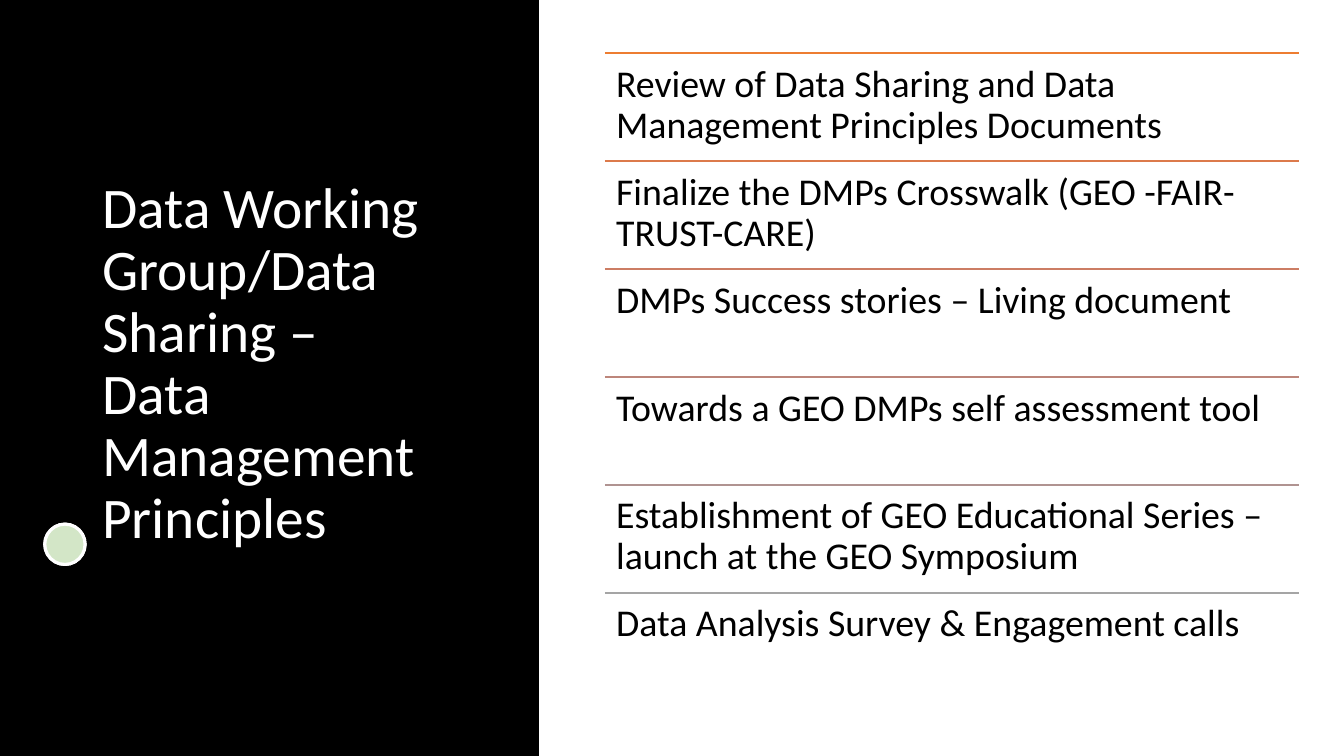
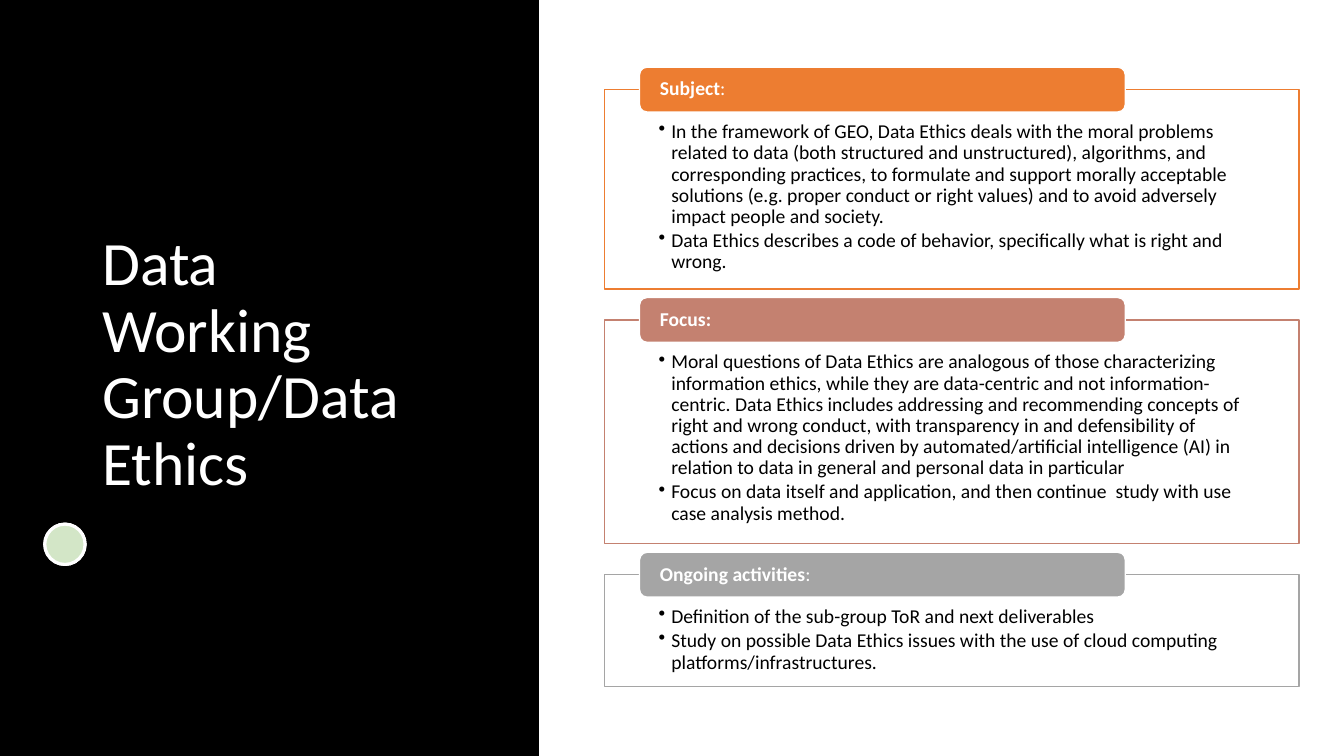
from dataclasses import dataclass

from lxml.etree import SubElement
from pptx import Presentation
from pptx.dml.color import RGBColor
from pptx.enum.shapes import MSO_CONNECTOR, MSO_SHAPE
from pptx.enum.text import MSO_ANCHOR, PP_ALIGN
from pptx.oxml.ns import qn
from pptx.util import Pt


@dataclass(frozen=True)
class Theme:
    font: str = "Calibri"
    black: str = "000000"
    white: str = "FFFFFF"
    green: str = "70AD47"
    orange: str = "ED7D31"
    clay: str = "C48170"
    grey: str = "A5A5A5"
    rules: tuple = ("ED7D31", "DC7A4B", "CC7D64", "BD867B", "B09391", "A5A5A5")
    item_size: int = 27
    body_size: int = 14
    line_spacing: float = 0.9


THEME = Theme()
SLIDE_WIDTH, SLIDE_HEIGHT = 960, 540
CONTENT_LEFT, CONTENT_WIDTH = 432, 496

TASKS_TITLE = "Data Working Group/Data Sharing – Data Management Principles"
TASKS = [
    "Review of Data Sharing and Data Management Principles Documents",
    "Finalize the DMPs Crosswalk (GEO -FAIR-TRUST-CARE)",
    "DMPs Success stories – Living document",
    "Towards a GEO DMPs self assessment tool",
    "Establishment of GEO Educational Series – launch at the GEO Symposium",
    "Data Analysis Survey & Engagement calls",
]

ETHICS_TITLE = "Data Working Group/Data Ethics"
# Each topic: bold heading, plain ending, colour, panel height, bullets
TOPICS = [
    ("Subject", ":", THEME.orange, 142.5, [
        "In the framework of GEO, Data Ethics deals with the moral problems "
        "related to data (both structured and unstructured), algorithms, and "
        "corresponding practices, to formulate and support morally acceptable "
        "solutions (e.g. proper conduct or right values) and to avoid "
        "adversely impact people and society.",
        "Data Ethics describes a code of behavior, specifically what is right "
        "and wrong.",
    ]),
    ("Focus:", "", THEME.clay, 160, [
        "Moral questions of Data Ethics are analogous of those characterizing "
        "information ethics, while they are data-centric and not "
        "information-centric. Data Ethics includes addressing and "
        "recommending concepts of right and wrong conduct, with transparency "
        "in and defensibility of actions and decisions driven by "
        "automated/artificial intelligence (AI) in relation to data in "
        "general and personal data in particular",
        "Focus on data itself and application, and then continue  study with "
        "use case analysis method.",
    ]),
    ("Ongoing activities", ":", THEME.grey, 80, [
        "Definition of the sub-group ToR and next deliverables",
        "Study on possible Data Ethics issues with the use of cloud computing "
        "platforms/infrastructures.",
    ]),
]


# Shapes and lines
def set_alpha(shape, percent):
    colour = shape.fill._xPr.find(qn("a:solidFill"))[0]
    SubElement(colour, qn("a:alpha")).set("val", str(percent * 1000))


def add_box(slide, kind, left, top, width, height, fill, line=None,
            line_width=1.0, alpha=None):
    box = slide.shapes.add_shape(kind, Pt(left), Pt(top), Pt(width), Pt(height))
    box.shadow.inherit = False
    box.fill.solid()
    box.fill.fore_color.rgb = RGBColor.from_string(fill)
    if alpha is not None:
        set_alpha(box, alpha)
    if line:
        box.line.color.rgb = RGBColor.from_string(line)
        box.line.width = Pt(line_width)
    else:
        box.line.fill.background()
    return box


def add_rule(slide, top, colour):
    rule = slide.shapes.add_connector(
        MSO_CONNECTOR.STRAIGHT, Pt(CONTENT_LEFT), Pt(top),
        Pt(CONTENT_LEFT + CONTENT_WIDTH), Pt(top))
    rule.line.color.rgb = RGBColor.from_string(colour)
    rule.line.width = Pt(1)
    SubElement(rule._element.spPr, qn("a:effectLst"))


# Text
def set_frame(shape, insets, anchor=MSO_ANCHOR.TOP):
    frame = shape.text_frame
    frame.word_wrap = True
    frame.vertical_anchor = anchor
    (frame.margin_left, frame.margin_top,
     frame.margin_right, frame.margin_bottom) = map(Pt, insets)
    return frame


def format_text(frame, size, colour):
    for paragraph in frame.paragraphs:
        paragraph.alignment = PP_ALIGN.LEFT
        paragraph.line_spacing = THEME.line_spacing
        for run in paragraph.runs:
            run.font.name = THEME.font
            run.font.size = Pt(size)
            run.font.color.rgb = RGBColor.from_string(colour)


def add_text(slide, left, top, width, height, text, size, colour, insets,
             anchor=MSO_ANCHOR.TOP):
    box = slide.shapes.add_textbox(Pt(left), Pt(top), Pt(width), Pt(height))
    frame = set_frame(box, insets, anchor)
    frame.text = text
    format_text(frame, size, colour)


def add_bullet(paragraph, indent=9):
    properties = paragraph._p.get_or_add_pPr()
    properties.set("marL", str(Pt(indent)))
    properties.set("indent", str(Pt(-indent)))
    SubElement(properties, qn("a:buChar")).set("char", "•")


# Slide frame: black band, title and dot
def add_titled_slide(deck, title, title_size):
    slide = deck.slides.add_slide(deck.slide_layouts[6])
    add_box(slide, MSO_SHAPE.RECTANGLE, 0, 0, 385, SLIDE_HEIGHT, THEME.black)
    add_text(slide, 66, 94.3, 252, 333.4, title, title_size, THEME.white,
             (7.2, 3.6, 12, 3.6), MSO_ANCHOR.MIDDLE)
    for fill, alpha in ((THEME.white, None), (THEME.green, 30)):
        add_box(slide, MSO_SHAPE.OVAL, 32, 374.4, 28.8, 28.8, fill,
                THEME.white, 2.25, alpha)
    return slide


# Ruled list of tasks
def add_task_list(slide, tasks, top=38, pitch=77.1):
    for row, (task, colour) in enumerate(zip(tasks, THEME.rules)):
        row_top = top + row * pitch
        add_rule(slide, row_top, colour)
        add_text(slide, CONTENT_LEFT, row_top, CONTENT_WIDTH, pitch, task,
                 THEME.item_size, THEME.black, (8.1,) * 4)


# Outlined panel with a coloured heading on its upper edge
def add_topic(slide, top, heading, ending, colour, height, bullets):
    panel = add_box(slide, MSO_SHAPE.RECTANGLE, CONTENT_LEFT, top,
                    CONTENT_WIDTH, height, THEME.white, colour, alpha=90)
    details = set_frame(panel, (38.5, 23, 38.5, 7.8))
    details.text = "\n".join(bullets)
    format_text(details, THEME.body_size, THEME.black)
    for paragraph in details.paragraphs:
        paragraph.space_after = Pt(2)
        add_bullet(paragraph)

    label = add_box(slide, MSO_SHAPE.ROUNDED_RECTANGLE, CONTENT_LEFT + 24.8,
                    top - 16, 347, 32, colour, THEME.white)
    caption = set_frame(label, (13, 0, 13, 0), MSO_ANCHOR.MIDDLE)
    caption.text = heading
    caption.paragraphs[0].runs[0].font.bold = True
    if ending:
        caption.paragraphs[0].add_run().text = ending
    format_text(caption, THEME.body_size, THEME.white)


def add_topics(slide, topics, top=64, gap=22):
    for heading, ending, colour, height, bullets in topics:
        add_topic(slide, top, heading, ending, colour, height, bullets)
        top += height + gap


def main():
    deck = Presentation()
    deck.slide_width, deck.slide_height = Pt(SLIDE_WIDTH), Pt(SLIDE_HEIGHT)
    add_task_list(add_titled_slide(deck, TASKS_TITLE, 41), TASKS)
    add_topics(add_titled_slide(deck, ETHICS_TITLE, 44), TOPICS)
    deck.save("out.pptx")


if __name__ == "__main__":
    main()
